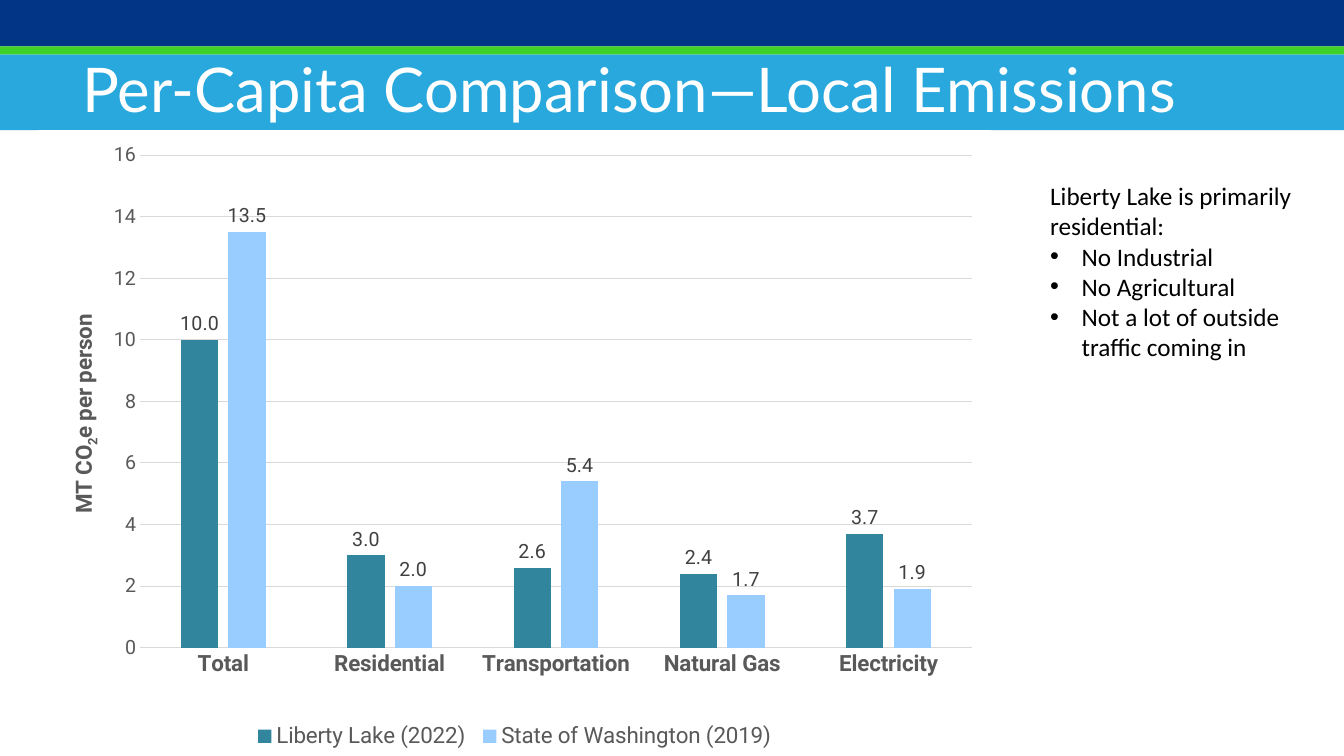
from dataclasses import dataclass

from lxml import etree
from pptx import Presentation
from pptx.chart.chart import Chart
from pptx.chart.data import CategoryChartData
from pptx.dml.color import RGBColor
from pptx.enum.chart import XL_CHART_TYPE, XL_LABEL_POSITION, XL_LEGEND_POSITION, XL_TICK_MARK
from pptx.enum.shapes import MSO_SHAPE
from pptx.oxml import parse_xml
from pptx.oxml.ns import nsdecls, qn
from pptx.slide import Slide
from pptx.text.text import Font, TextFrame
from pptx.util import Pt

RECTANGLE = MSO_SHAPE.RECTANGLE
COLUMN_CLUSTERED = XL_CHART_TYPE.COLUMN_CLUSTERED
OUTSIDE_END = XL_LABEL_POSITION.OUTSIDE_END
LEGEND_BOTTOM = XL_LEGEND_POSITION.BOTTOM
NO_TICK = XL_TICK_MARK.NONE


@dataclass(frozen=True)
class Theme:
    title_font: str = "Lato"
    body_font: str = "Calibri"
    chart_font: str = "Roboto"
    title_size: float = 44
    body_size: float = 18
    axis_size: float = 16
    value_size: float = 14
    white: str = "FFFFFF"
    black: str = "000000"
    navy: str = "023586"
    green: str = "3ED128"
    sky: str = "28A8DD"
    teal: str = "31859C"
    pale_blue: str = "99CCFF"
    axis_text: str = "595959"
    label_text: str = "404040"
    grid: str = "D9D9D9"


THEME = Theme()


@dataclass(frozen=True)
class Band:
    top: float
    height: float
    color: str


@dataclass(frozen=True)
class Note:
    text: str
    bulleted: bool = True


@dataclass(frozen=True)
class EmissionSeries:
    name: str
    values: tuple[float, ...]
    color: str


BANDS = (
    Band(38.88, 54, THEME.sky),
    Band(0, 33.12, THEME.navy),
    Band(33.12, 5.76, THEME.green),
)
NOTES = (
    Note("Liberty Lake is primarily residential:", False),
    Note("No Industrial"),
    Note("No Agricultural"),
    Note("Not a lot of outside traffic coming in"),
)
CATEGORIES = ("Total", "Residential", "Transportation", "Natural Gas", "Electricity")
SERIES = (
    EmissionSeries("Liberty Lake (2022)", (10.0, 3.0, 2.6, 2.4, 3.7), THEME.teal),
    EmissionSeries("State of Washington (2019)", (13.5, 2.0, 5.4, 1.7, 1.9), THEME.pale_blue),
)


def style_font(font: Font, name: str, size: float, color: str, bold: bool = False) -> None:
    font.name = name
    font.size = Pt(size)
    font.bold = bold
    font.color.rgb = RGBColor.from_string(color)


def add_band(slide: Slide, band: Band, width: float) -> None:
    shape = slide.shapes.add_shape(RECTANGLE, 0, Pt(band.top), Pt(width), Pt(band.height))
    shape.shadow.inherit = False
    shape.fill.solid()
    shape.fill.fore_color.rgb = RGBColor.from_string(band.color)
    shape.line.fill.background()


def add_text_frame(slide: Slide, left: float, top: float, width: float, height: float) -> TextFrame:
    text_frame = slide.shapes.add_textbox(Pt(left), Pt(top), Pt(width), Pt(height)).text_frame
    text_frame.word_wrap = True
    return text_frame


def add_title(slide: Slide) -> None:
    text_frame = add_text_frame(slide, 51.84, 33.12, 866.88, 60.48)
    run = text_frame.paragraphs[0].add_run()
    run.text = "Per-Capita Comparison—Local Emissions"
    style_font(run.font, THEME.title_font, THEME.title_size, THEME.white)


def add_notes(slide: Slide) -> None:
    text_frame = add_text_frame(slide, 743.04, 125.28, 202.32, 138.24)
    for index, note in enumerate(NOTES):
        paragraph = text_frame.add_paragraph() if index else text_frame.paragraphs[0]
        run = paragraph.add_run()
        run.text = note.text
        style_font(run.font, THEME.body_font, THEME.body_size, THEME.black)
        if note.bulleted:
            properties = paragraph._p.get_or_add_pPr()
            properties.set("marL", str(Pt(22.5)))
            properties.set("indent", str(Pt(-22.5)))
            etree.SubElement(properties, qn("a:buFont")).set("typeface", "Arial")
            etree.SubElement(properties, qn("a:buChar")).set("char", "•")


def set_layout(element: etree.ElementBase, index: int, **settings: object) -> None:
    for existing in element.findall(qn("c:layout")):
        element.remove(existing)
    layout = etree.Element(qn("c:layout"))
    manual = etree.SubElement(layout, qn("c:manualLayout"))
    for name, value in settings.items():
        etree.SubElement(manual, qn(f"c:{name}")).set("val", str(value))
    element.insert(index, layout)


def style_axes(chart: Chart) -> None:
    category_axis = chart.category_axis
    category_axis.major_tick_mark = NO_TICK
    category_axis.format.line.color.rgb = RGBColor.from_string(THEME.grid)
    category_axis.format.line.width = Pt(0.75)
    style_font(category_axis.tick_labels.font, THEME.chart_font, THEME.axis_size, THEME.axis_text, True)

    value_axis = chart.value_axis
    value_axis.minimum_scale, value_axis.maximum_scale, value_axis.major_unit = 0, 16, 2
    value_axis.major_tick_mark = NO_TICK
    value_axis.format.line.fill.background()
    value_axis.major_gridlines.format.line.color.rgb = RGBColor.from_string(THEME.grid)
    value_axis.major_gridlines.format.line.width = Pt(0.75)
    value_axis.tick_labels.number_format = "0"
    value_axis.tick_labels.number_format_is_linked = False
    style_font(value_axis.tick_labels.font, THEME.chart_font, THEME.value_size, THEME.axis_text)

    axis_title = value_axis.axis_title
    text_frame = axis_title.text_frame
    body = text_frame._txBody.find(qn("a:bodyPr"))
    body.set("rot", "-5400000")
    body.set("vert", "horz")
    for text, baseline in (("MT CO", 0), ("2", -25000), ("e per person", 0)):
        run = text_frame.paragraphs[0].add_run()
        run.text = text
        style_font(run.font, THEME.chart_font, THEME.axis_size, THEME.axis_text, True)
        run._r.get_or_add_rPr().set("baseline", str(baseline))
    set_layout(axis_title._element, 1, xMode="edge", yMode="edge", x=0.03, y=0.29)


def add_emissions_chart(slide: Slide) -> None:
    chart_data = CategoryChartData(number_format="#,##0.0")
    chart_data.categories = CATEGORIES
    for series in SERIES:
        chart_data.add_series(series.name, series.values)
    chart = slide.shapes.add_chart(
        COLUMN_CLUSTERED, Pt(27.36), Pt(92.88), Pt(680.4), Pt(447.12), chart_data
    ).chart
    style_font(chart.font, THEME.chart_font, 10, THEME.black)
    chart.has_title = False
    background = parse_xml(
        f'<c:spPr {nsdecls("c", "a")}><a:solidFill><a:srgbClr val="{THEME.white}"/></a:solidFill>'
        "<a:ln><a:noFill/></a:ln></c:spPr>"
    )
    chart._chartSpace.find(qn("c:txPr")).addprevious(background)

    plot = chart.plots[0]
    plot.gap_width, plot.overlap = 219, -27
    plot.vary_by_categories = False
    for plotted, series in zip(plot.series, SERIES):
        plotted.format.fill.solid()
        plotted.format.fill.fore_color.rgb = RGBColor.from_string(series.color)
        labels = plotted.data_labels
        labels.show_value = True
        labels.number_format = "#,##0.0"
        labels.number_format_is_linked = False
        labels.position = OUTSIDE_END
        style_font(labels.font, THEME.chart_font, THEME.value_size, THEME.label_text)

    style_axes(chart)
    chart.has_legend = True
    legend = chart.legend
    legend.position = LEGEND_BOTTOM
    legend.include_in_layout = False
    style_font(legend.font, THEME.chart_font, THEME.axis_size, THEME.axis_text)
    set_layout(legend._element, 1, xMode="edge", yMode="edge", x=0.22, y=0.95, w=0.56, h=0.05)
    plot_area = chart._chartSpace.chart.plotArea
    set_layout(plot_area, 0, layoutTarget="inner", xMode="edge", yMode="edge", x=0.107, y=0.04, w=0.873, h=0.787)


def main() -> None:
    presentation = Presentation()
    presentation.slide_width, presentation.slide_height = Pt(960), Pt(540)
    slide = presentation.slides.add_slide(presentation.slide_layouts[6])
    for band in BANDS:
        add_band(slide, band, 960)
    add_title(slide)
    add_notes(slide)
    add_emissions_chart(slide)
    presentation.save("out.pptx")


if __name__ == "__main__":
    main()
